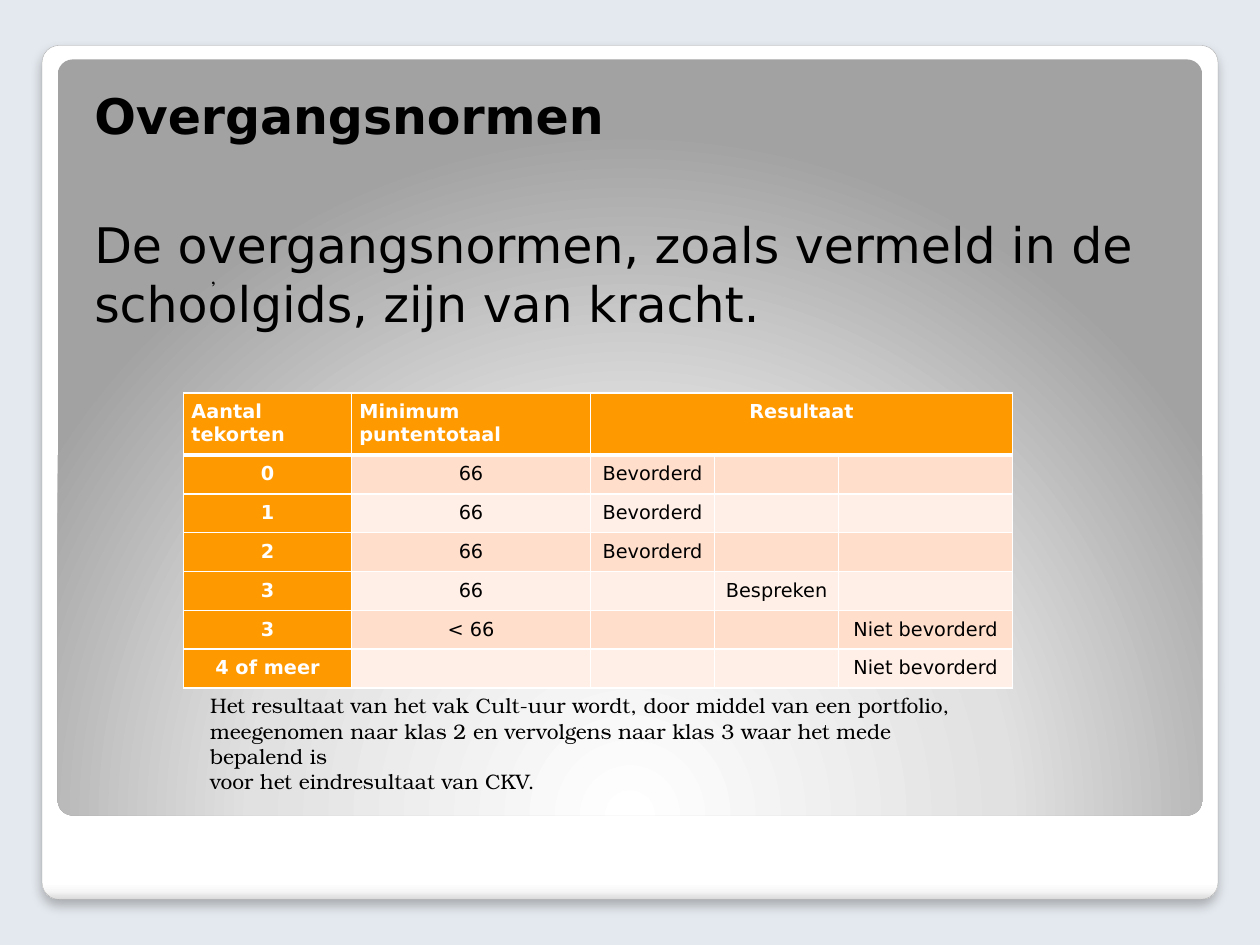
from lxml.etree import SubElement
from pptx import Presentation
from pptx.dml.color import RGBColor
from pptx.enum.shapes import MSO_SHAPE
from pptx.enum.text import PP_ALIGN
from pptx.oxml.ns import qn
from pptx.util import Pt

SANS, SERIF = "DejaVu Sans", "TeX Gyre Bonum"
WHITE, BLACK, ORANGE = "FFFFFF", "000000", "FF9900"
BANDS = ("FFDECC", "FFEFE7")
COLUMN_WIDTHS = (96, 136.6, 70.9, 70.9, 99.4)
HEADER_HEIGHT, ROW_HEIGHT = 33.8, 22.1
NORMS = (
    ("Aantal tekorten", "Minimum puntentotaal", "Resultaat", "", ""),
    ("0", "66", "Bevorderd", "", ""),
    ("1", "66", "Bevorderd", "", ""),
    ("2", "66", "Bevorderd", "", ""),
    ("3", "66", "", "Bespreken", ""),
    ("3", "< 66", "", "", "Niet bevorderd"),
    ("4 of meer", "", "", "", "Niet bevorderd"),
)
FOOTNOTE = (
    "Het resultaat van het vak Cult-uur wordt, door middel van een portfolio,",
    "meegenomen naar klas 2 en vervolgens naar klas 3 waar het mede bepalend is",
    "voor het eindresultaat van CKV.",
)


def rgb(value):
    """Turn a hex string into a colour."""
    return RGBColor.from_string(value)


def add_element(parent, tag, **attributes):
    """Append a DrawingML element with the given attributes."""
    texts = {name: str(value) for name, value in attributes.items()}
    return SubElement(parent, qn(f"a:{tag}"), **texts)


def write(paragraph, text, font=SANS, size=11, color=BLACK, bold=False,
          align=PP_ALIGN.LEFT, before=0):
    """Fill a paragraph with formatted text, or size it when it is empty."""
    paragraph.alignment = align
    paragraph.space_before = Pt(before)
    if not text:
        add_element(paragraph._p, "endParaRPr", sz=size * 100)
        return
    run = paragraph.add_run()
    run.text = text
    run.font.name, run.font.size, run.font.bold = font, Pt(size), bold
    run.font.color.rgb = rgb(color)


def add_panel(slide, left, top, width, height, stops):
    """Add a rounded panel with gradient stops and return it with its gradient."""
    panel = slide.shapes.add_shape(MSO_SHAPE.ROUNDED_RECTANGLE, Pt(left), Pt(top),
                                   Pt(width), Pt(height))
    panel.adjustments[0] = 0.02
    panel.shadow.inherit = False
    panel.line.fill.background()
    panel.fill.gradient()
    gradient = panel._element.spPr.find(qn("a:gradFill"))
    for child in list(gradient):
        gradient.remove(child)
    stop_list = add_element(gradient, "gsLst")
    for position, color in stops:
        stop = add_element(stop_list, "gs", pos=position * 1000)
        add_element(stop, "srgbClr", val=color)
    return panel, gradient


def add_card(slide):
    """Add the white card with its thin outline and soft shadow."""
    card, gradient = add_panel(slide, 24, 26, 672, 488, (
        (0, WHITE), (98, WHITE), (99, "F7F7F7"), (100, "DADADA")))
    add_element(gradient, "lin", ang=5400000, scaled=0)
    card.line.color.rgb = rgb("A4A4A4")
    card.line.width = Pt(0.16)
    effects = card._element.spPr.find(qn("a:effectLst"))
    shadow = add_element(effects, "outerShdw", blurRad=Pt(6), dist=Pt(4),
                         dir=5400000, algn="t", rotWithShape=0)
    add_element(add_element(shadow, "srgbClr", val=BLACK), "alpha", val=25000)


def add_backdrop(slide):
    """Add the grey panel lit from its lower edge."""
    _, gradient = add_panel(slide, 33, 34, 654, 432, (
        (0, WHITE), (55, "E1E1E1"), (100, "A2A2A2")))
    circle = add_element(gradient, "path", path="circle")
    add_element(circle, "fillToRect", l=50000, t=175000, r=50000, b=-75000)


def add_text(slide, left, top, width, height, lines, **style):
    """Add a wrapping text box, each line being a text with its own format."""
    frame = slide.shapes.add_textbox(Pt(left), Pt(top), Pt(width), Pt(height)).text_frame
    frame.word_wrap = True
    frame.margin_left = frame.margin_right = Pt(7.2)
    frame.margin_top = frame.margin_bottom = 0
    for index, (text, extra) in enumerate(lines):
        paragraph = frame.add_paragraph() if index else frame.paragraphs[0]
        write(paragraph, text, **style, **extra)


def fill_cell(cell, row, column, text):
    """Format one table cell according to its row and column."""
    properties = cell._tc.get_or_add_tcPr()
    heavy = {0: "lnB", 1: "lnT"}.get(row)
    for side in ("lnL", "lnR", "lnT", "lnB"):
        border = add_element(properties, side, w=Pt(3 if side == heavy else 1))
        add_element(add_element(border, "solidFill"), "srgbClr", val=WHITE)
    label = row == 0 or column == 0
    cell.fill.solid()
    cell.fill.fore_color.rgb = rgb(ORANGE if label else BANDS[(row - 1) % 2])
    cell.margin_left = cell.margin_right = Pt(4.5)
    cell.margin_top = cell.margin_bottom = Pt(4.5)
    left_aligned = row == 0 and column < 2
    write(cell.text_frame.paragraphs[0], text, bold=label,
          color=WHITE if label else BLACK,
          align=PP_ALIGN.LEFT if left_aligned else PP_ALIGN.CENTER)


def add_norms_table(slide):
    """Add the table of promotion norms."""
    heights = [HEADER_HEIGHT] + [ROW_HEIGHT] * (len(NORMS) - 1)
    table = slide.shapes.add_table(len(NORMS), len(COLUMN_WIDTHS), Pt(104.9), Pt(224.6),
                                   Pt(sum(COLUMN_WIDTHS)), Pt(sum(heights))).table
    for column, width in zip(table.columns, COLUMN_WIDTHS):
        column.width = Pt(width)
    for row, height in zip(table.rows, heights):
        row.height = Pt(height)
    for row, texts in enumerate(NORMS):
        for column, text in enumerate(texts):
            fill_cell(table.cell(row, column), row, column, text)
    table.cell(0, 2).merge(table.cell(0, 4))


def main():
    """Build the slide and save it."""
    presentation = Presentation()
    presentation.slide_width, presentation.slide_height = Pt(720), Pt(540)
    slide = presentation.slides.add_slide(presentation.slide_layouts[6])
    slide.background.fill.solid()
    slide.background.fill.fore_color.rgb = rgb("E4E9EF")
    add_card(slide)
    add_backdrop(slide)
    add_text(slide, 46.8, 49, 637.2, 379, (
        ("Overgangsnormen", {"bold": True, "before": 2.5}),
        ("De overgangsnormen, zoals vermeld in de schoolgids, zijn van kracht.",
         {"before": 40}),
    ), size=28)
    add_norms_table(slide)
    add_text(slide, 113, 150.5, 456.5, 14.5, [(",", {})], font=SERIF, size=12)
    add_text(slide, 113, 396, 456.5, 58, [(line, {}) for line in FOOTNOTE],
             font=SERIF, size=12)
    presentation.save("out.pptx")


if __name__ == "__main__":
    main()
